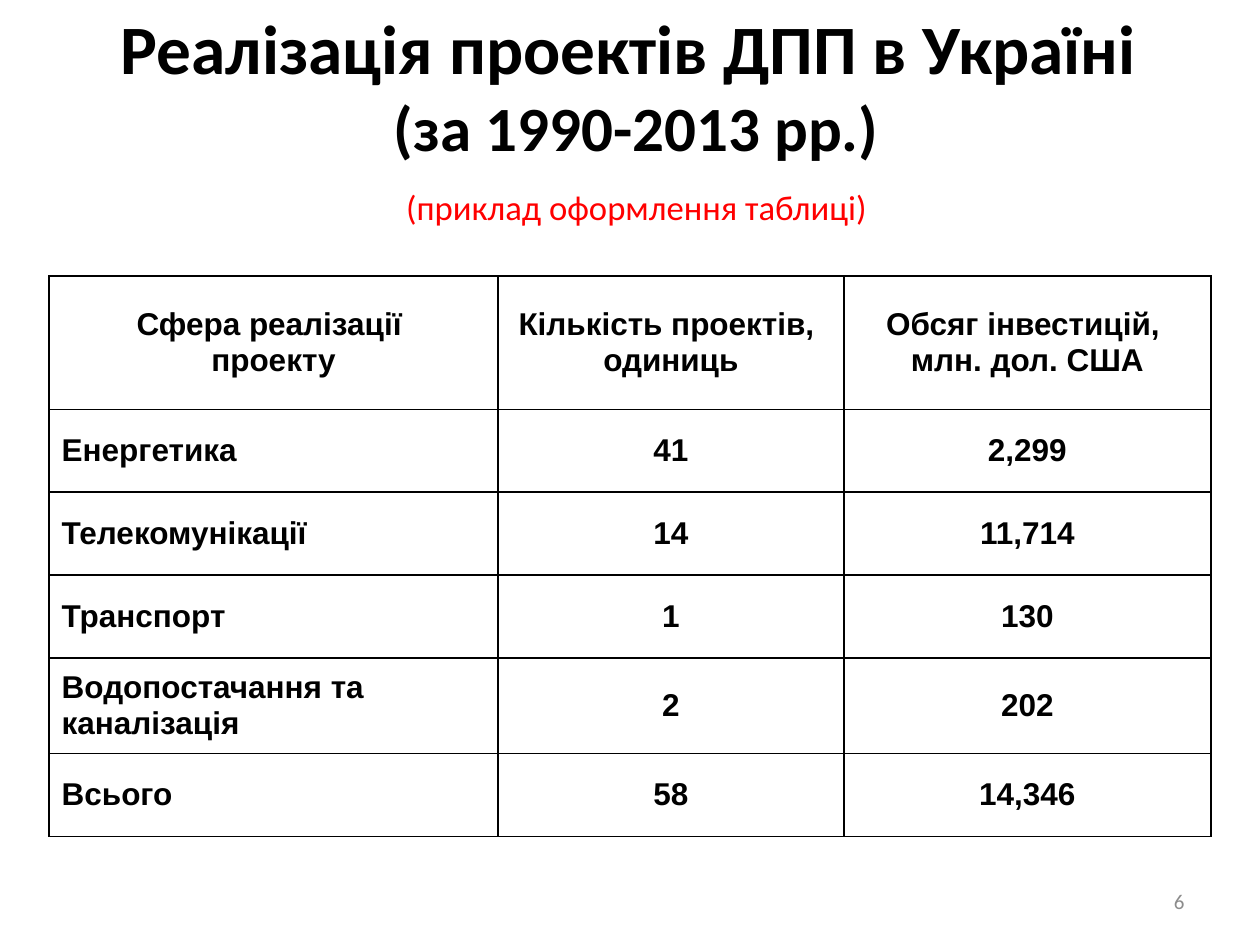
from lxml import etree
from pptx import Presentation
from pptx import util as u
from pptx.dml.color import RGBColor
from pptx.enum import text
from pptx.oxml import ns

BLACK = RGBColor(0x00, 0x00, 0x00)
WHITE = RGBColor(0xFF, 0xFF, 0xFF)
RED = RGBColor(0xFF, 0x00, 0x00)
GREY = RGBColor(0x8C, 0x8C, 0x8C)

TITLE_LINES = [
    ("Реалізація проектів ДПП в Україні ", 39.6, BLACK, True),
    ("(за 1990-2013 рр.)", 36, BLACK, True),
    ("(приклад оформлення таблиці)", 19.8, RED, False),
]
PROJECTS = [
    ("Сфера реалізації \nпроекту", "Кількість проектів, \nодиниць",
     "Обсяг інвестицій, \nмлн. дол. США"),
    ("Енергетика", "41", "2,299"),
    ("Телекомунікації", "14", "11,714"),
    ("Транспорт", "1", "130"),
    ("Водопостачання та каналізація", "2", "202"),
    ("Всього", "58", "14,346"),
]
COLUMN_WIDTHS = [9.05, 6.97, 7.4]
ROW_HEIGHTS = [2.69, 1.67, 1.67, 1.67, 1.93, 1.67]
HANGING = u.Cm(0.95)


def format_paragraph(paragraph, font_name, size, color, bold, alignment):
    paragraph.alignment = alignment
    for run in paragraph.runs:
        run.font.name = font_name
        run.font.size = u.Pt(size)
        run.font.bold = bold
        run.font.color.rgb = color


def place(shape, left, top, width, height):
    shape.left, shape.top = u.Cm(left), u.Cm(top)
    shape.width, shape.height = u.Cm(width), u.Cm(height)


def add_title(slide, box):
    title = slide.shapes.title
    place(title, *box)
    frame = title.text_frame
    frame.text = "\n".join(line[0] for line in TITLE_LINES)
    frame.auto_size = text.MSO_AUTO_SIZE.NONE
    frame.vertical_anchor = text.MSO_ANCHOR.MIDDLE
    # A deep bottom inset lifts the heading towards the slide's top edge
    frame.margin_bottom = u.Cm(1.75)
    for paragraph, (_, size, color, bold) in zip(frame.paragraphs, TITLE_LINES):
        format_paragraph(paragraph, "Calibri", size, color, bold, text.PP_ALIGN.CENTER)
        paragraph.space_before = u.Pt(0)
    frame.paragraphs[-1].space_before = u.Pt(12.6)


def add_borders(cell):
    properties = cell._tc.get_or_add_tcPr()
    for index, side in enumerate(("a:lnL", "a:lnR", "a:lnT", "a:lnB")):
        line = etree.Element(ns.qn(side), w=str(u.Pt(1)))
        fill = etree.SubElement(line, ns.qn("a:solidFill"))
        etree.SubElement(fill, ns.qn("a:srgbClr"), val=str(BLACK))
        properties.insert(index, line)


def fill_cell(cell, content, alignment, hanging):
    cell.text_frame.text = content
    cell.vertical_anchor = text.MSO_ANCHOR.MIDDLE
    cell.fill.solid()
    cell.fill.fore_color.rgb = WHITE
    for paragraph in cell.text_frame.paragraphs:
        format_paragraph(paragraph, "Arial", 18, BLACK, True, alignment)
        if hanging:
            properties = paragraph._p.get_or_add_pPr()
            properties.set("marL", str(HANGING))
            properties.set("indent", str(-HANGING))
    add_borders(cell)


def add_projects_table(slide, left, top):
    table = slide.shapes.add_table(
        len(PROJECTS), len(COLUMN_WIDTHS), u.Cm(left), u.Cm(top),
        u.Cm(sum(COLUMN_WIDTHS)), u.Cm(sum(ROW_HEIGHTS))).table
    table.first_row = table.horz_banding = False
    for column, width in zip(table.columns, COLUMN_WIDTHS):
        column.width = u.Cm(width)
    for row, height in zip(table.rows, ROW_HEIGHTS):
        row.height = u.Cm(height)
    for i, record in enumerate(PROJECTS):
        for j, content in enumerate(record):
            is_label = i > 0 and j == 0
            alignment = text.PP_ALIGN.LEFT if is_label else text.PP_ALIGN.CENTER
            # The long label wraps flush left, so it has no hanging indent
            hanging = not (is_label and len(content) > 20)
            fill_cell(table.cell(i, j), content, alignment, hanging)


def add_page_number(slide, box, number):
    shape = slide.shapes.add_textbox(*(u.Cm(length) for length in box))
    frame = shape.text_frame
    frame.word_wrap = True
    frame.vertical_anchor = text.MSO_ANCHOR.MIDDLE
    frame.text = number
    format_paragraph(frame.paragraphs[0], "Calibri", 12, GREY, False, text.PP_ALIGN.RIGHT)


def main():
    presentation = Presentation()
    presentation.slide_width, presentation.slide_height = u.Cm(25.4), u.Cm(19.05)
    slide = presentation.slides.add_slide(presentation.slide_layouts[5])
    add_title(slide, (1.4, 1.57, 22.86, 3.18))
    add_page_number(slide, (18.2, 17.66, 5.93, 1.01), "6")
    add_projects_table(slide, 0.99, 5.56)
    presentation.save("out.pptx")


if __name__ == "__main__":
    main()
